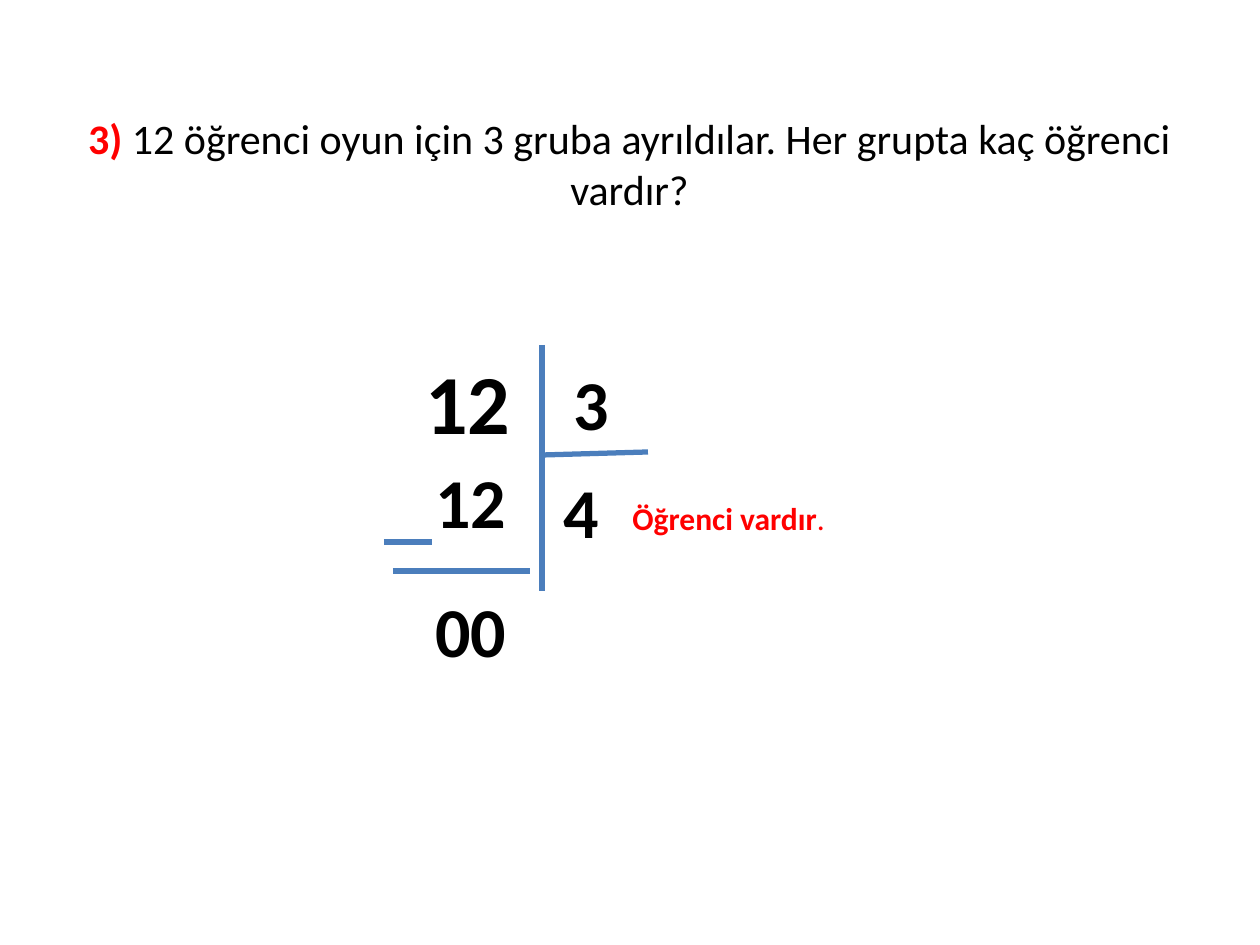
from lxml.etree import SubElement
from pptx import Presentation
from pptx.dml.color import RGBColor
from pptx.enum.shapes import MSO_CONNECTOR
from pptx.enum.text import MSO_ANCHOR, PP_ALIGN
from pptx.oxml.ns import qn
from pptx.util import Emu, Pt

PX = 914400 // 126  # EMU in one px
SLIDE_SIZE = (1260, 945)

THEME = {
    "font": "Calibri",
    "ink": RGBColor(0x00, 0x00, 0x00),
    "accent": RGBColor(0xFF, 0x00, 0x00),
    "rule": RGBColor(0x4B, 0x7E, 0xBC),
    "rule_width": Pt(3),
    "question": Pt(24),
    "dividend": Pt(48),
    "digit": Pt(40),
    "answer": Pt(18),
}

# Text: box (left, top, width, height), size, runs of (text, colour, bold)
QUESTION = ((29, 103, 1201, 120), "question", [
    ("3) ", "accent", True),
    ("12 öğrenci oyun için 3 gruba ayrıldılar. Her grupta kaç öğrenci vardır?", "ink", False),
])
DIVISION = [
    ((413, 344, 129, 115), "dividend", [("12", "ink", True)]),
    ((561, 354, 108, 97), "digit", [("3", "ink", True)]),
    ((551, 462, 108, 97), "digit", [("4", "ink", True)]),
    ((423, 452, 98, 97), "digit", [("12", "ink", True)]),
    ((423, 581, 137, 97), "digit", [("00", "ink", True)]),
    ((620, 493, 286, 50), "answer", [("Öğrenci vardır", "accent", True), (".", "accent", False)]),
]

# Rules: start x, start y, end x, end y
RULES = {
    "division bar": (542, 345, 542, 591),
    "divisor line": (542, 455, 648, 452),
    "minus sign": (384, 542, 432, 542),
    "remainder line": (393, 571, 530, 571),
}


def to_emu(lengths):
    return [Emu(length * PX) for length in lengths]


def add_text(slide, box, size, runs, anchor=MSO_ANCHOR.TOP, alignment=PP_ALIGN.LEFT):
    frame = slide.shapes.add_textbox(*to_emu(box)).text_frame
    frame.word_wrap = True
    frame.vertical_anchor = anchor
    paragraph = frame.paragraphs[0]
    paragraph.alignment = alignment
    for text, colour, bold in runs:
        run = paragraph.add_run()
        run.text = text
        run.font.color.rgb = THEME[colour]
        for name, value in {"name": THEME["font"], "size": THEME[size], "bold": bold}.items():
            setattr(run.font, name, value)


def add_rule(slide, ends):
    connector = slide.shapes.add_connector(MSO_CONNECTOR.STRAIGHT, *to_emu(ends))
    connector.line.color.rgb = THEME["rule"]
    connector.line.width = THEME["rule_width"]
    SubElement(connector._element.spPr, qn("a:effectLst"))


def main():
    presentation = Presentation()
    presentation.slide_width, presentation.slide_height = to_emu(SLIDE_SIZE)
    slide = presentation.slides.add_slide(presentation.slide_layouts[6])

    # Question
    add_text(slide, *QUESTION, anchor=MSO_ANCHOR.MIDDLE, alignment=PP_ALIGN.CENTER)

    # Long division
    for box, size, runs in DIVISION:
        add_text(slide, box, size, runs)
    for ends in RULES.values():
        add_rule(slide, ends)

    presentation.save("out.pptx")


if __name__ == "__main__":
    main()
